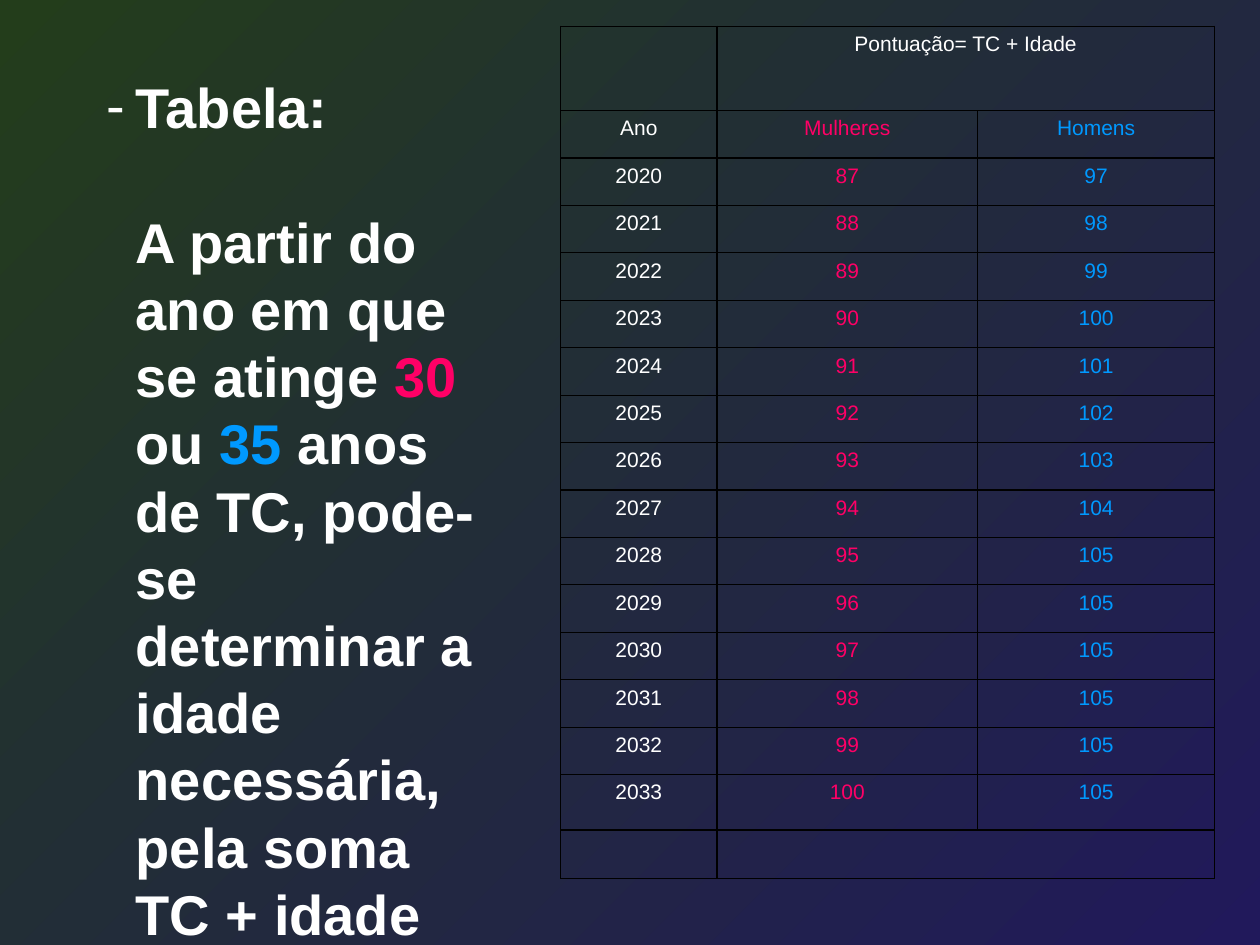
import lxml.etree
import pptx
import pptx.dml.color
import pptx.enum.text
import pptx.oxml.ns
import pptx.util

Pt = pptx.util.Pt
RGBColor = pptx.dml.color.RGBColor

WHITE = RGBColor(0xFF, 0xFF, 0xFF)
PINK = RGBColor(0xFF, 0x00, 0x66)
BLUE = RGBColor(0x00, 0x99, 0xFF)
BLACK = RGBColor(0x00, 0x00, 0x00)
GREEN_DARK = RGBColor(0x23, 0x3D, 0x1B)
INDIGO = RGBColor(0x21, 0x19, 0x5B)

FONT = "Arial"
COLUMN_COLORS = (WHITE, PINK, BLUE)
COLUMN_WIDTHS = (89.3, 149, 135.4)
HEADER_HEIGHT, ROW_HEIGHT, LAST_YEAR_HEIGHT = 48.2, 27.1, 31.7
FIRST_YEAR, LAST_YEAR = 2020, 2033
WOMEN_START, MEN_START, MEN_LIMIT = 87, 97, 105

EXPLANATION = (
    ("Tabela:\v\vA partir do ano em que se atinge ", WHITE),
    ("30", PINK),
    (" ou ", WHITE),
    ("35", BLUE),
    (" anos de TC, pode-se determinar a idade necessária, pela soma TC + idade", WHITE),
)


def add_element(parent, tag, **attributes):
    return lxml.etree.SubElement(parent, pptx.oxml.ns.qn(tag), attributes)


def style_span(span, size, color, bold=False):
    span.font.name = FONT
    span.font.size = Pt(size)
    span.font.bold = bold
    span.font.color.rgb = color


def paint_background(page):
    fill = page.background.fill
    fill.gradient()
    fill.gradient_angle = 315
    for stop, color in zip(fill.gradient_stops, (GREEN_DARK, INDIGO)):
        stop.color.rgb = color


def add_borders(cell):
    properties = cell._tc.get_or_add_tcPr()
    for side in ("a:lnL", "a:lnR", "a:lnT", "a:lnB"):
        line = add_element(properties, side, w=str(Pt(0.75)))
        add_element(add_element(line, "a:solidFill"), "a:srgbClr", val=str(BLACK))


def format_cell(cell, text, color):
    cell.margin_bottom = Pt(2)
    add_borders(cell)
    cell.fill.background()
    if text:
        cell.text_frame.text = text
        para = cell.text_frame.paragraphs[0]
        para.alignment = pptx.enum.text.PP_ALIGN.CENTER
        style_span(para.runs[0], 12, color)


def score_rows():
    years = [
        (str(FIRST_YEAR + step), str(WOMEN_START + step), str(min(MEN_START + step, MEN_LIMIT)))
        for step in range(LAST_YEAR - FIRST_YEAR + 1)
    ]
    return [("", "Pontuação= TC + Idade", ""), ("Ano", "Mulheres", "Homens"), *years, ("", "", "")]


def add_score_table(page):
    rows = score_rows()
    heights = [ROW_HEIGHT] * len(rows)
    heights[0], heights[-2] = HEADER_HEIGHT, LAST_YEAR_HEIGHT
    frame = page.shapes.add_table(
        len(rows), len(COLUMN_WIDTHS), Pt(320.4), Pt(15), Pt(sum(COLUMN_WIDTHS)), Pt(sum(heights))
    )
    table = frame.table
    table.first_row = False
    table.horz_banding = False
    for column, width in zip(table.columns, COLUMN_WIDTHS):
        column.width = Pt(width)
    for row, height in zip(table.rows, heights):
        row.height = Pt(height)
    for row_index, values in enumerate(rows):
        for column_index, (value, color) in enumerate(zip(values, COLUMN_COLORS)):
            shown_color = color if row_index else WHITE
            format_cell(table.cell(row_index, column_index), value, shown_color)
    for row_index in (0, len(rows) - 1):
        table.cell(row_index, 1).merge(table.cell(row_index, 2))


def set_dash_bullet(para, indent):
    properties = para._p.get_or_add_pPr()
    properties.set("marL", str(Pt(indent)))
    properties.set("indent", str(-Pt(indent)))
    add_element(properties, "a:buFont", typeface=FONT)
    add_element(properties, "a:buChar", char="-")


def add_explanation(page):
    box = page.shapes.add_textbox(Pt(54), Pt(38), Pt(232.6), Pt(301))
    box.text_frame.word_wrap = True
    para = box.text_frame.paragraphs[0]
    para.text = "".join(text for text, color in EXPLANATION[:1])
    for text, color in EXPLANATION[1:]:
        span = para.add_run()
        span.text = text
        style_span(span, 32, color, bold=True)
    for span in para.runs[:-len(EXPLANATION) + 1]:
        style_span(span, 32, EXPLANATION[0][1], bold=True)
    para.line_spacing = Pt(38.4)
    set_dash_bullet(para, 16.5)


def main():
    """Build the slide with the yearly score table and its explanation."""
    deck = pptx.Presentation()
    deck.slide_width, deck.slide_height = Pt(720), Pt(540)
    page = deck.slides.add_slide(deck.slide_layouts[6])
    paint_background(page)
    add_score_table(page)
    add_explanation(page)
    deck.save("out.pptx")


if __name__ == "__main__":
    main()
